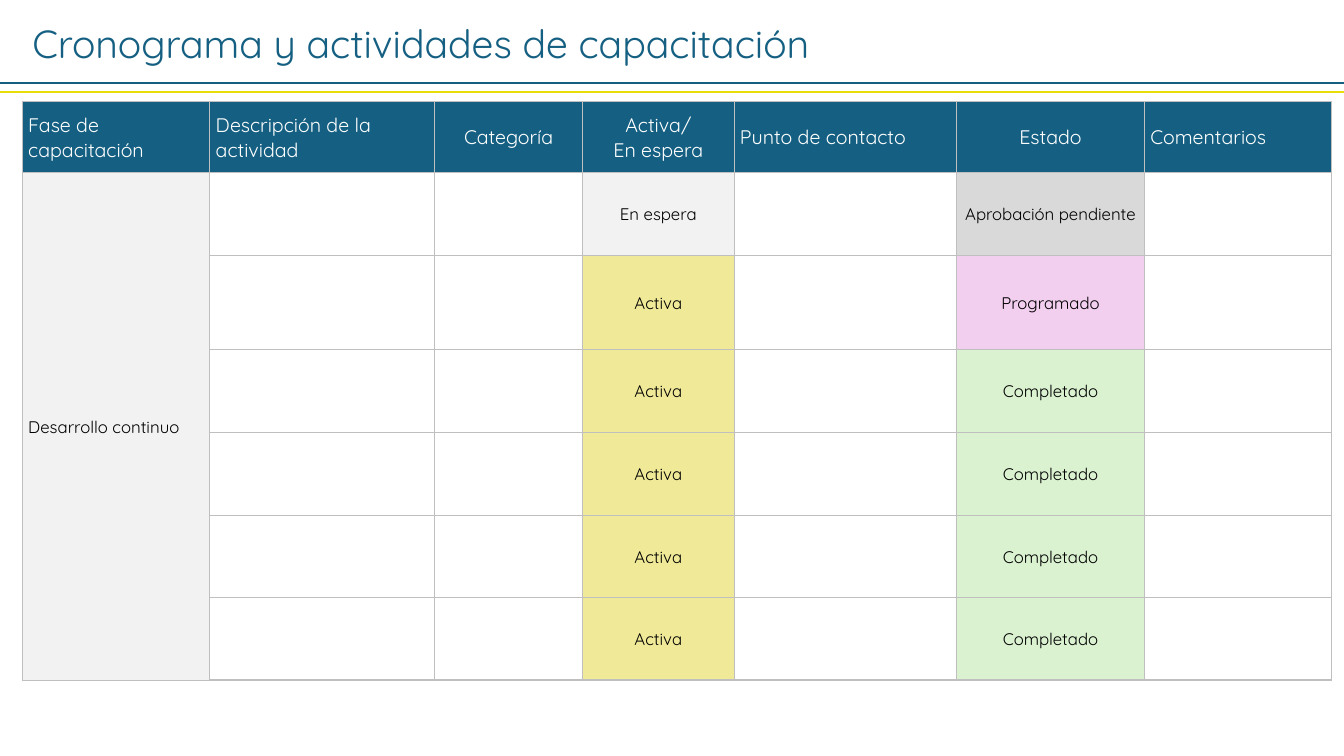
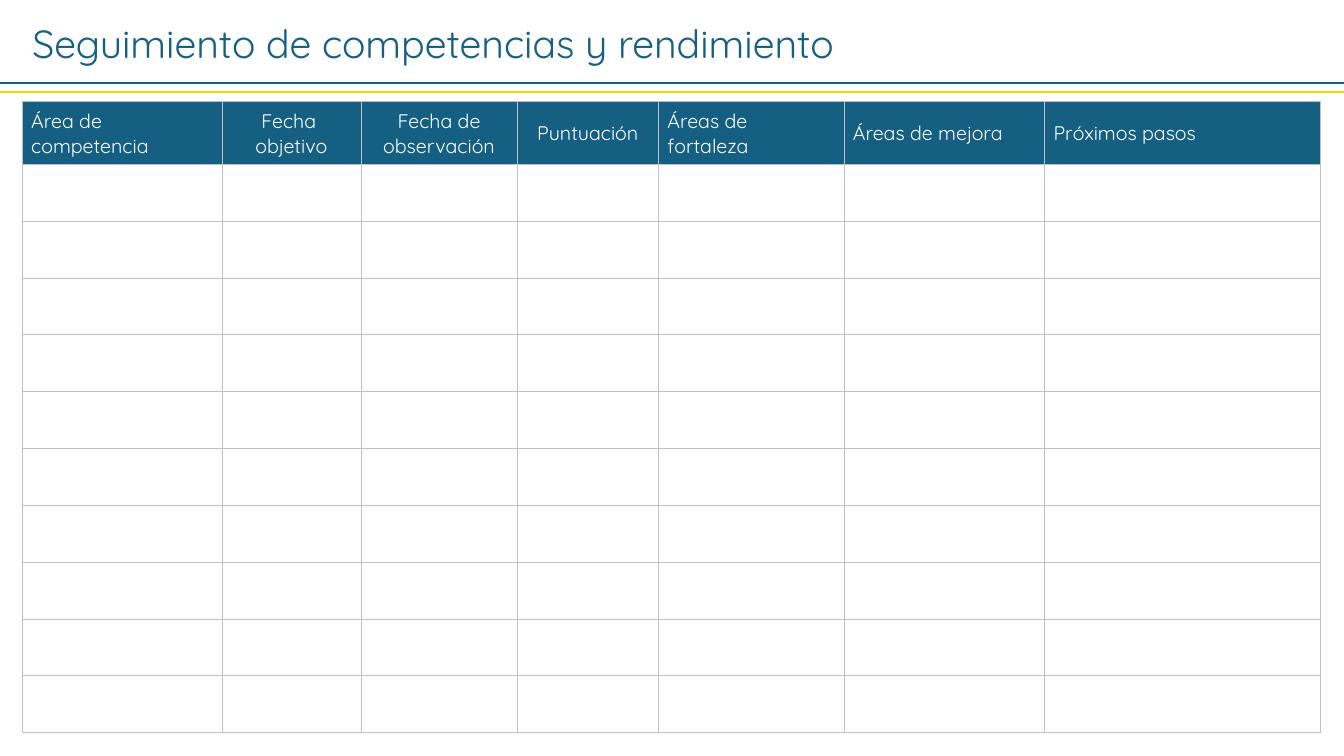
from lxml.etree import SubElement
from pptx import Presentation
from pptx.dml.color import RGBColor
from pptx.enum.shapes import MSO_CONNECTOR
from pptx.enum.text import MSO_ANCHOR, MSO_AUTO_SIZE, PP_ALIGN
from pptx.oxml.ns import qn
from pptx.util import Inches, Pt

FONT = "Quicksand"
COLORS = {
    "blue": "156082",
    "yellow": "E8DD06",
    "grid": "BFBFBF",
    "white": "FFFFFF",
    "black": "000000",
    "light_gray": "F2F2F2",
}
STATUS_COLORS = {
    "En espera": COLORS["light_gray"],
    "Activa": "F0EA98",
    "Aprobación pendiente": "D9D9D9",
    "Programado": "F2CEEF",
    "Completado": "DAF2D0",
}
SLIDE_WIDTH, SLIDE_HEIGHT = 13.33, 7.5
TABLE_LEFT, TABLE_TOP = 0.22, 1.01
CENTERED_INSET = 0.01


def style_font(paragraph, size, color):
    paragraph.font.name = FONT
    paragraph.font.size = Pt(size)
    paragraph.font.bold = False
    paragraph.font.color.rgb = RGBColor.from_string(color)


def add_rule(slide, top, color):
    rule = slide.shapes.add_connector(
        MSO_CONNECTOR.STRAIGHT, 0, Inches(top), Inches(SLIDE_WIDTH), Inches(top))
    rule.line.color.rgb = RGBColor.from_string(color)
    rule.line.width = Pt(1.5)
    SubElement(rule._element.spPr, qn("a:effectLst"))


def add_titled_slide(presentation, title_text):
    """Add a slide with the shared title and the two rules below it."""
    slide = presentation.slides.add_slide(presentation.slide_layouts[5])
    title = slide.shapes.title
    title.left, title.top = Inches(0.22), Inches(0.14)
    title.width, title.height = Inches(12.55), Inches(0.57)
    frame = title.text_frame
    frame.text = title_text
    frame.word_wrap = True
    frame.auto_size = MSO_AUTO_SIZE.NONE
    frame.vertical_anchor = MSO_ANCHOR.TOP
    frame.paragraphs[0].alignment = PP_ALIGN.LEFT
    style_font(frame.paragraphs[0], 28, COLORS["blue"])
    add_rule(slide, 0.82, COLORS["blue"])
    add_rule(slide, 0.91, COLORS["yellow"])
    return slide


def set_borders(cell, bottom_width=0.5):
    properties = cell._tc.get_or_add_tcPr()
    for side, width in (("L", 0.5), ("R", 0.5), ("T", 0.5), ("B", bottom_width)):
        line = SubElement(properties, qn(f"a:ln{side}"), w=str(Pt(width)))
        fill = SubElement(line, qn("a:solidFill"))
        SubElement(fill, qn("a:srgbClr"), val=COLORS["grid"])


def fill_cell(cell, color):
    cell.fill.solid()
    cell.fill.fore_color.rgb = RGBColor.from_string(color)


def write_cell(cell, text, size, color, inset):
    """Write text, centered when the inset is the narrow one."""
    cell.vertical_anchor = MSO_ANCHOR.MIDDLE
    cell.margin_left, cell.margin_right = Inches(inset), Inches(0.01)
    cell.margin_top, cell.margin_bottom = Inches(0.01), 0
    cell.text_frame.text = text
    paragraph = cell.text_frame.paragraphs[0]
    centered = inset == CENTERED_INSET
    paragraph.alignment = PP_ALIGN.CENTER if centered else PP_ALIGN.LEFT
    style_font(paragraph, size, color)


def add_grid(slide, left, top, headers, centered_columns, column_widths,
             row_heights, left_inset, last_border=0.5):
    """Add a bordered table with a blue header row and a white body."""
    table = slide.shapes.add_table(
        len(row_heights), len(column_widths), Inches(left), Inches(top),
        Inches(sum(column_widths)), Inches(sum(row_heights))).table
    table.horz_banding = False
    for column, width in zip(table.columns, column_widths):
        column.width = Inches(width)
    for row, height in zip(table.rows, row_heights):
        row.height = Inches(height)
    last_row = len(row_heights) - 1
    for row_index, row in enumerate(table.rows):
        for cell in row.cells:
            set_borders(cell, last_border if row_index == last_row else 0.5)
            fill_cell(cell, COLORS["white"] if row_index else COLORS["blue"])
    for column_index, header in enumerate(headers):
        inset = CENTERED_INSET if column_index in centered_columns else left_inset
        write_cell(table.cell(0, column_index), header, 14, COLORS["white"], inset)
    return table


def build_schedule_slide(presentation):
    slide = add_titled_slide(presentation, "Cronograma y actividades de capacitación")
    headers = ["Fase de capacitación", "Descripción de la actividad", "Categoría",
               "Activa/\vEn espera", "Punto de contacto", "Estado", "Comentarios"]
    activity_column, status_column = 3, 5
    table = add_grid(
        slide, TABLE_LEFT, TABLE_TOP, headers, {2, activity_column, status_column},
        [1.86, 2.23, 1.47, 1.5, 2.21, 1.86, 1.86],
        [0.7, 0.82, 0.94] + [0.82] * 4, left_inset=0.06, last_border=1.5)

    phase = table.cell(1, 0)
    phase.merge(table.cell(6, 0))
    fill_cell(phase, COLORS["light_gray"])
    write_cell(phase, "Desarrollo continuo", 12, COLORS["black"], 0.06)

    activities = [("En espera", "Aprobación pendiente"), ("Activa", "Programado")]
    activities += [("Activa", "Completado")] * 4
    for row_index, labels in enumerate(activities, start=1):
        for column_index, label in zip((activity_column, status_column), labels):
            cell = table.cell(row_index, column_index)
            fill_cell(cell, STATUS_COLORS[label])
            write_cell(cell, label, 12, COLORS["black"], CENTERED_INSET)


def build_performance_slide(presentation):
    slide = add_titled_slide(presentation, "Seguimiento de competencias y rendimiento")
    headers = ["Área de competencia", "Fecha \vobjetivo", "Fecha de observación",
               "Puntuación", "Áreas de \vfortaleza", "Áreas de mejora",
               "Próximos pasos"]
    add_grid(slide, TABLE_LEFT, TABLE_TOP, headers, {1, 2, 3},
             [1.98, 1.38, 1.55, 1.4, 1.84, 1.99, 2.74],
             [0.62] + [0.564] * 10, left_inset=0.09)


def main():
    presentation = Presentation()
    presentation.slide_width = Inches(SLIDE_WIDTH)
    presentation.slide_height = Inches(SLIDE_HEIGHT)
    build_schedule_slide(presentation)
    build_performance_slide(presentation)
    presentation.save("out.pptx")


if __name__ == "__main__":
    main()
